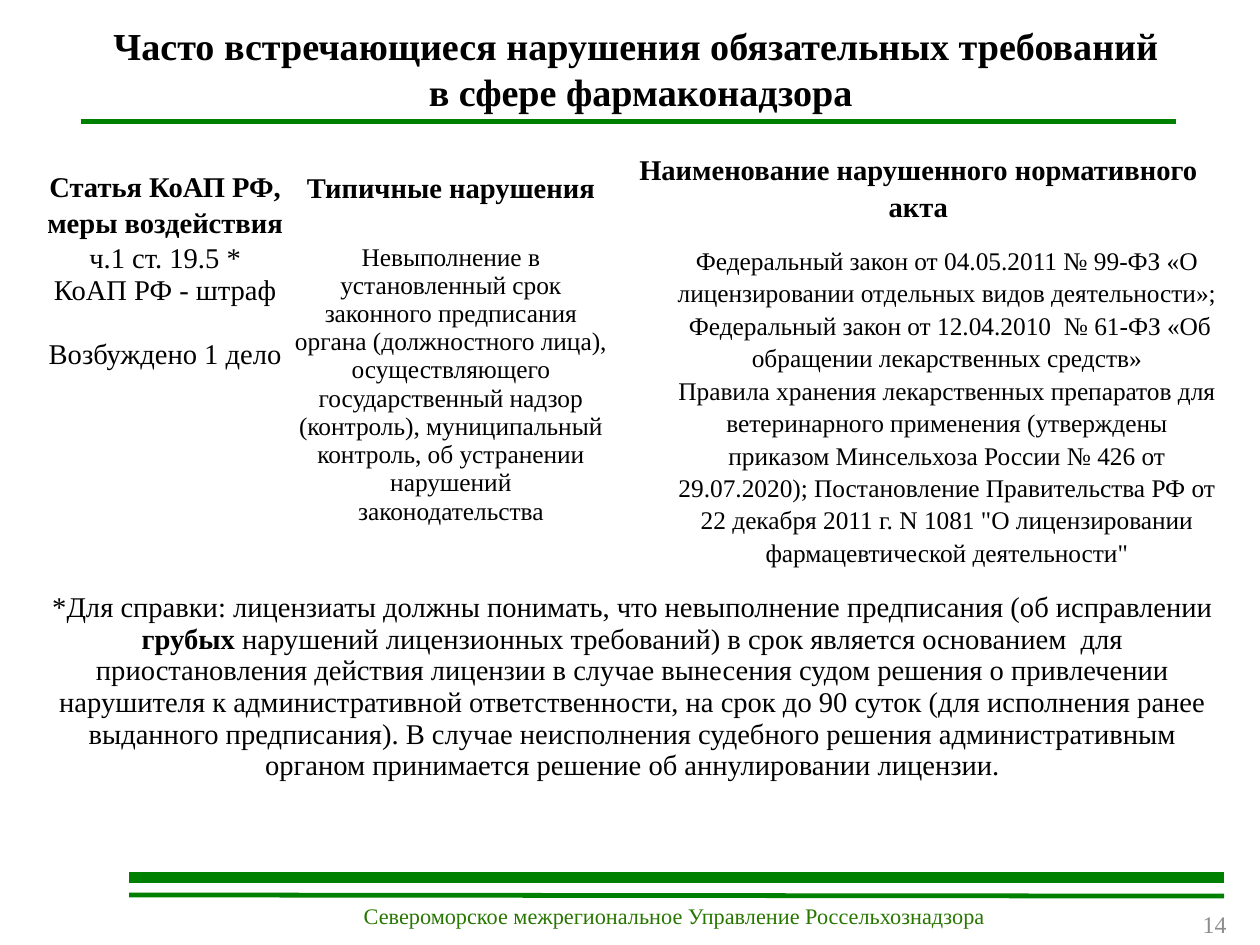
from lxml.etree import SubElement
from pptx import Presentation
from pptx.dml.color import RGBColor
from pptx.enum.shapes import MSO_CONNECTOR
from pptx.enum.text import MSO_ANCHOR, PP_ALIGN
from pptx.oxml.ns import qn
from pptx.util import Inches, Pt

BLACK = RGBColor(0x00, 0x00, 0x00)
WHITE = RGBColor(0xFF, 0xFF, 0xFF)
GREEN = RGBColor(0x00, 0x80, 0x00)
FOOTER_GREEN = RGBColor(0x27, 0x76, 0x00)
GRAY = RGBColor(0x8C, 0x8C, 0x8C)
FONT = "Times New Roman"
CM_PER_INCH = 2.54

HEADERS = [
    ["Статья КоАП РФ, ", "меры воздействия"],
    ["Типичные нарушения"],
    ["Наименование нарушенного нормативного акта"],
]
ARTICLE = ["ч.1 ст. 19.5 *", "КоАП РФ - штраф", "Возбуждено 1 дело"]
VIOLATION = [
    "Невыполнение в установленный срок законного предписания органа "
    "(должностного лица), осуществляющего государственный надзор (контроль), "
    "муниципальный контроль, об устранении нарушений законодательства"
]
ACTS = [
    "Федеральный закон от 04.05.2011 № 99-ФЗ «О лицензировании отдельных видов "
    "деятельности»;  Федеральный закон от 12.04.2010  № 61-ФЗ «Об обращении "
    "лекарственных средств»",
    "Правила хранения лекарственных препаратов для ветеринарного применения "
    "(утверждены приказом Минсельхоза России № 426 от 29.07.2020); Постановление "
    "Правительства РФ от 22 декабря 2011 г. N 1081 \"О лицензировании "
    "фармацевтической деятельности\"",
]
NOTE = [
    [
        ("*Для справки: лицензиаты должны понимать, что невыполнение предписания "
         "(об исправлении ", False),
        ("грубых", True),
        (" нарушений лицензионных требований) в срок является основанием  для "
         "приостановления действия лицензии в случае вынесения судом решения о "
         "привлечении нарушителя к административной ответственности, на срок до "
         "90 суток (для исполнения ранее выданного предписания). В случае "
         "неисполнения судебного решения административным органом принимается "
         "решение об аннулировании лицензии.", False),
    ]
]


def write(tf, paragraphs, size=18, bold=False, color=BLACK,
          align=PP_ALIGN.CENTER, spacing=1.0, indent=0):
    for i, content in enumerate(paragraphs):
        p = tf.add_paragraph() if i else tf.paragraphs[0]
        p.alignment = align
        p.line_spacing = spacing
        if indent:
            pPr = p._p.get_or_add_pPr()
            pPr.set("marL", str(Inches(indent)))
            pPr.set("indent", "0")
        runs = [(content, bold)] if isinstance(content, str) else content
        for text, is_bold in runs:
            r = p.add_run()
            r.text = text
            r.font.name = FONT
            r.font.size = Pt(size)
            r.font.bold = is_bold
            r.font.color.rgb = color


class SlideBuilder:
    def __init__(self, prs):
        self.s = prs.slides.add_slide(prs.slide_layouts[5])

    def frame(self, sp, anchor, margin=0):
        tf = sp.text_frame
        tf.word_wrap = True
        tf.vertical_anchor = anchor
        tf.margin_left = tf.margin_right = Inches(margin)
        tf.margin_top = tf.margin_bottom = Inches(margin / 2)
        return tf

    def title(self, paragraphs, x, y, w, h):
        sp = self.s.shapes.title
        sp.left, sp.top, sp.width, sp.height = map(Inches, (x, y, w, h))
        write(self.frame(sp, MSO_ANCHOR.TOP), paragraphs, size=24, bold=True)

    def text(self, text, x, y, w, h, anchor=MSO_ANCHOR.TOP, margin=0, **style):
        sp = self.s.shapes.add_textbox(*map(Inches, (x, y, w, h)))
        write(self.frame(sp, anchor, margin), [text], **style)

    def line(self, x1, y1, x2, y2, width):
        c = self.s.shapes.add_connector(
            MSO_CONNECTOR.STRAIGHT, *map(Inches, (x1, y1, x2, y2)))
        c.line.color.rgb = GREEN
        c.line.width = Pt(width)
        SubElement(c._element.spPr, qn("a:effectLst"))

    def table(self, x, y, cols, rows):
        gf = self.s.shapes.add_table(
            len(rows), len(cols), *map(Inches, (x, y, sum(cols), sum(rows))))
        table = gf.table
        for column, width in zip(table.columns, cols):
            column.width = Inches(width)
        for row, height in zip(table.rows, rows):
            row.height = Inches(height)
        last = len(rows) - 1
        for i, row in enumerate(table.rows):
            for cell in row.cells:
                cell.margin_left = cell.margin_right = Inches(0.05)
                cell.margin_top = cell.margin_bottom = 0
                self.borders(cell, top=3 if i else 1, bottom=1 if i == last else 3)
                cell.fill.background()
        return table

    def borders(self, cell, top, bottom):
        tcPr = cell._tc.get_or_add_tcPr()
        for side, width in (("L", 1), ("R", 1), ("T", top), ("B", bottom)):
            ln = SubElement(tcPr, qn(f"a:ln{side}"), w=str(Pt(width)))
            fill = SubElement(ln, qn("a:solidFill"))
            SubElement(fill, qn("a:srgbClr"), val=str(WHITE))


def main():
    prs = Presentation()
    prs.slide_width = Inches(28 / CM_PER_INCH)
    prs.slide_height = Inches(21 / CM_PER_INCH)
    slide = SlideBuilder(prs)

    slide.title(["Часто встречающиеся нарушения обязательных требований ",
                 "в сфере фармаконадзора"], 0.37, 0.2, 10.47, 0.87)
    slide.line(0.71, 1.06, 10.29, 1.06, 3)

    table = slide.table(0.36, 1.14, [2.17, 2.83, 5.35], [0.99, 3.05, 1.86])
    for j, header in enumerate(HEADERS):
        cell = table.cell(0, j)
        cell.vertical_anchor = MSO_ANCHOR.MIDDLE if j else MSO_ANCHOR.TOP
        write(cell.text_frame, header, bold=True, spacing=1.15)
    table.cell(0, 0).margin_top = Inches(0.32)

    article = table.cell(1, 0).text_frame
    write(article, ARTICLE)
    article.paragraphs[-1].space_before = Pt(20)
    write(table.cell(1, 1).text_frame, VIOLATION, size=16)
    write(table.cell(1, 2).text_frame, ACTS, size=16, spacing=1.15, indent=0.5)

    table.cell(2, 0).merge(table.cell(2, 2))
    write(table.cell(2, 0).text_frame, NOTE)

    slide.line(1.13, 7.68, 10.71, 7.68, 7)
    slide.line(1.13, 7.83, 10.71, 7.84, 3)
    slide.text("Североморское межрегиональное Управление Россельхознадзора",
               0.69, 7.91, 10.42, 0.38, size=14, color=FOOTER_GREEN, spacing=0.95)
    slide.text("14", 10.16, 7.91, 0.68, 0.35, anchor=MSO_ANCHOR.MIDDLE, margin=0.11,
               size=15, color=GRAY, align=PP_ALIGN.RIGHT)

    prs.save("out.pptx")


if __name__ == "__main__":
    main()
